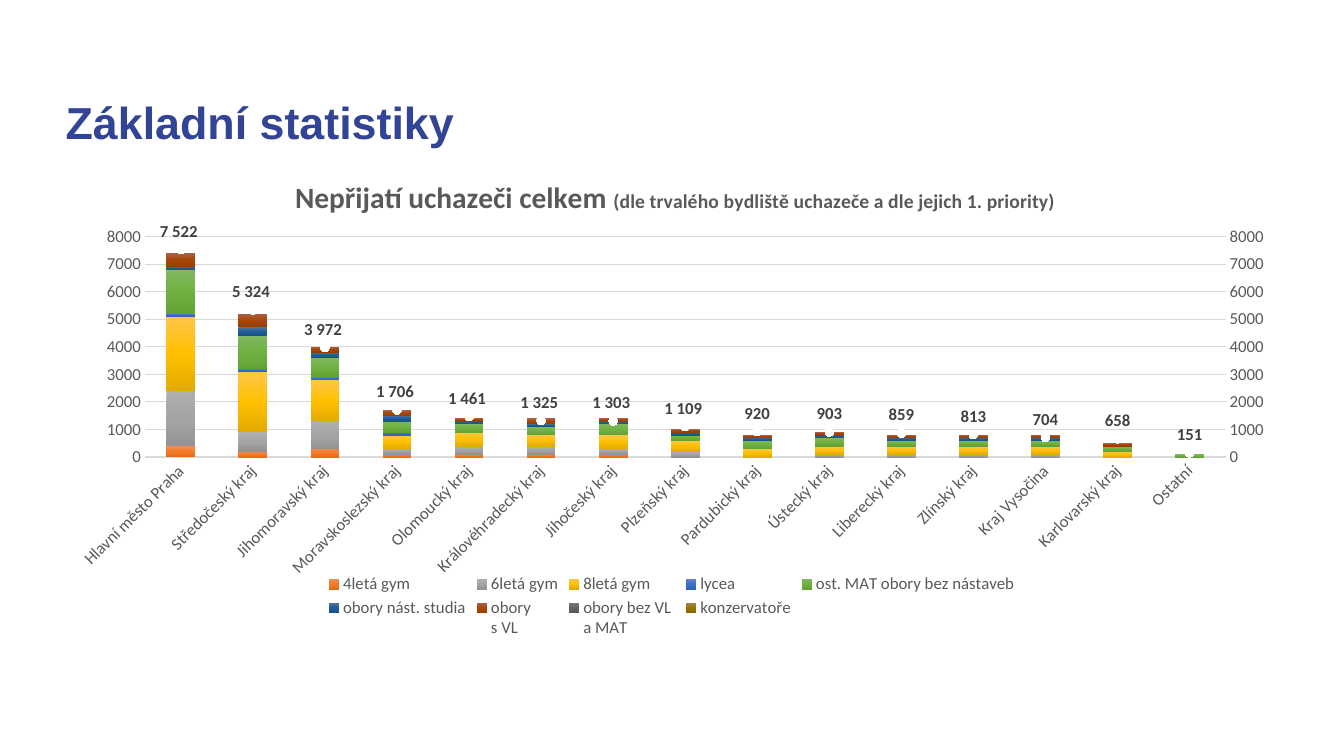
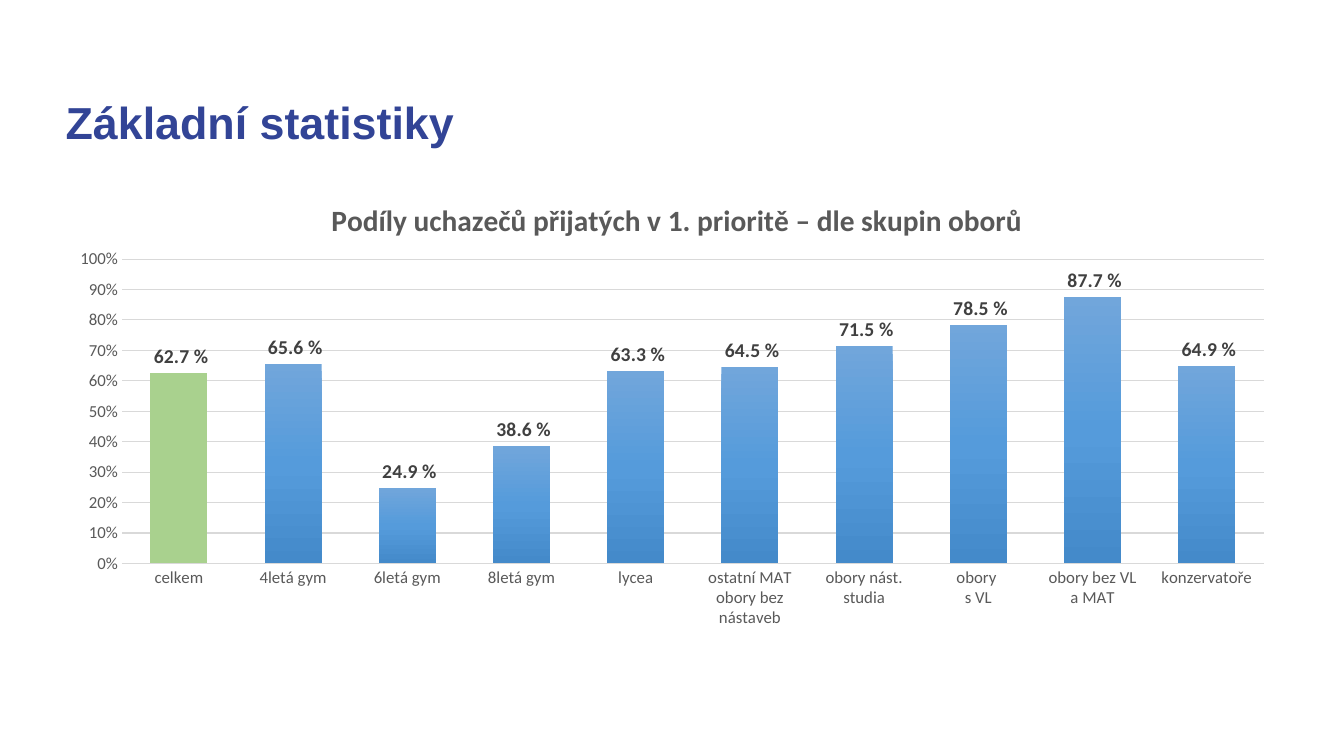
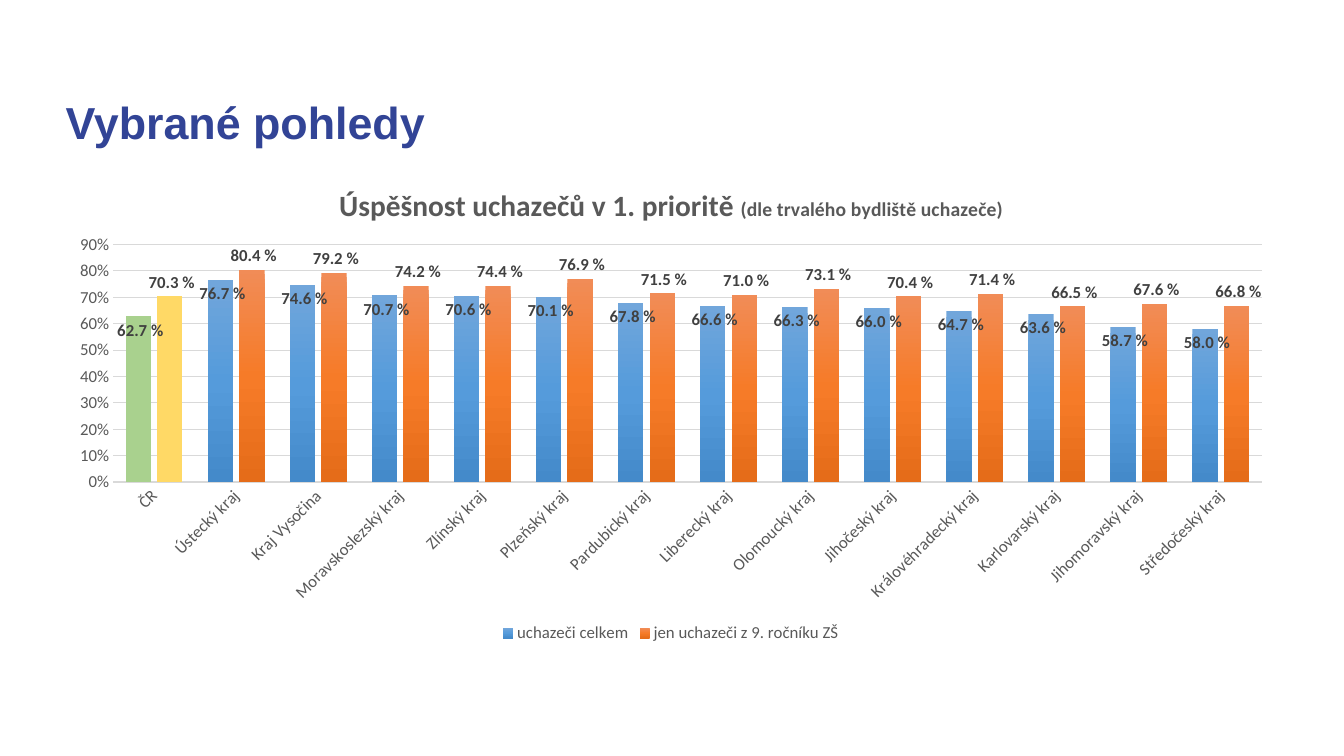
from copy import deepcopy

from pptx import Presentation
from pptx.chart.data import CategoryChartData
from pptx.dml.color import RGBColor
from pptx.enum.chart import (XL_CHART_TYPE, XL_LABEL_POSITION, XL_LEGEND_POSITION,
                             XL_MARKER_STYLE, XL_TICK_MARK)
from pptx.enum.text import MSO_ANCHOR, PP_ALIGN
from pptx.oxml import parse_xml
from pptx.oxml.ns import nsdecls, qn
from pptx.util import Cm, Pt

STACKED, CLUSTERED = XL_CHART_TYPE.COLUMN_STACKED, XL_CHART_TYPE.COLUMN_CLUSTERED
ABOVE, OUTSIDE, INSIDE = (XL_LABEL_POSITION.ABOVE, XL_LABEL_POSITION.OUTSIDE_END,
                          XL_LABEL_POSITION.INSIDE_END)
BOTTOM, CIRCLE, NO_TICK = XL_LEGEND_POSITION.BOTTOM, XL_MARKER_STYLE.CIRCLE, XL_TICK_MARK.NONE
TOP, LEFT = MSO_ANCHOR.TOP, PP_ALIGN.LEFT

NAVY, GREY, DARK, RULE, WHITE = "324496", "595959", "404040", "D9D9D9", "FFFFFF"
LIGHT_GREEN, LIGHT_YELLOW = "A9D18E", "FFD966"
BLUE = ("71A6DB", "559BDB", "448ACA")
ORANGE = ("F18C57", "F67B28", "E56C19")
COUNT = "#\\ ##0_ ;[Red]\\-#\\ ##0\\ ;\\–\\ "
PERCENT = '#\\ ##0.0" "%;[Red]\\-#\\ ##0.0" "%;\\–\\ '
RIGHT_AXIS_IDS = {"c:catAx": "50010", "c:valAx": "50020"}

# Series: name, values, gradient, colour of the first point, label position
REJECTED = [
    ("4letá gym", [400, 200, 300, 100, 100, 100, 100, 0, 0, 0, 0, 0, 0, 0, 0], ORANGE),
    ("6letá gym", [2000, 700, 1000, 200, 300, 300, 200, 200, 0, 100, 100, 100, 100, 0, 0],
     ("AFAFAF", "A5A5A5", "939393")),
    ("8letá gym", [2700, 2200, 1500, 500, 500, 400, 500, 400, 300, 300, 300, 300, 300, 200, 0],
     ("FFC64B", "FFC000", "E3AB00")),
    ("lycea", [100, 100, 100, 100] + [0] * 11, ("6183CB", "3E70CA", "3062BB")),
    ("ost. MAT obory bez nástaveb",
     [1600, 1200, 700, 400, 300, 300, 400, 200, 300, 300, 200, 200, 200, 200, 100],
     ("81B861", "6FB242", "62A336")),
    ("obory nást. studia",
     [100, 300, 200, 200, 100, 100, 100, 100, 100, 100, 100, 100, 100, 0, 0],
     ("51739F", "205E97", "17548B")),
    ("obory \ns VL",
     [500, 500, 200, 200, 100, 200, 100, 100, 100, 100, 100, 100, 100, 100, 0],
     ("AB634B", "A54707", "983E00")),
    ("obory bez VL \na MAT", [0] * 15, ("777777", "636363", "585858")),
    ("konzervatoře", [0] * 15, ("A4844B", "997300", "886600")),
]
REJECTED_TOTALS = [7522, 5324, 3972, 1706, 1461, 1325, 1303, 1109, 920, 903, 859, 813,
                   704, 658, 151]
ADMITTED = [0.627, 0.656, 0.249, 0.386, 0.633, 0.645, 0.715, 0.785, 0.877, 0.649]
SUCCESS_ALL = [0.627, 0.767, 0.746, 0.707, 0.706, 0.701, 0.678, 0.666, 0.663, 0.66, 0.647,
               0.636, 0.587, 0.58]
SUCCESS_NINTH = [0.703, 0.804, 0.792, 0.742, 0.744, 0.769, 0.715, 0.71, 0.731, 0.704, 0.714,
                 0.665, 0.676, 0.668]

# Boxes are left, top, width, height in centimetres on the slide
SLIDES = [
    dict(heading="Základní statistiky",
         title="Nepřijatí uchazeči celkem",
         subtitle="(dle trvalého bydliště uchazeče a dle jejich 1. priority)",
         kind=STACKED, box=(1.4, 3.89, 31.06, 12.29), plot=(3.65, 5.96, 27.24, 5.56),
         title_at=(7.36, 4.41), gap=150, overlap=100, top=8000, step=1000,
         axis_format="General", slanted=True, legend=True,
         categories=["Hlavní město Praha", "Středočeský kraj", "Jihomoravský kraj",
                     "Moravskoslezský kraj", "Olomoucký kraj", "Královéhradecký kraj",
                     "Jihočeský kraj", "Plzeňský kraj", "Pardubický kraj", "Ústecký kraj",
                     "Liberecký kraj", "Zlínský kraj", "Kraj Vysočina", "Karlovarský kraj",
                     "Ostatní"],
         series=[(*row, None, None) for row in REJECTED], totals=REJECTED_TOTALS),
    dict(heading="Základní statistiky",
         title="Podíly uchazečů přijatých v 1. prioritě – dle skupin oborů", subtitle="",
         kind=CLUSTERED, box=(1.4, 4.32, 31.06, 11.73), plot=(3.07, 6.53, 28.78, 7.67),
         title_at=(8.22, 4.89), gap=100, overlap=-24, top=1, step=0.1,
         axis_format="0%", slanted=False, legend=False, label_size=14,
         categories=["celkem", "4letá gym", "6letá gym", "8letá gym", "lycea",
                     "ostatní MAT obory bez nástaveb", "obory nást. studia", "obory \ns VL",
                     "obory bez VL\na MAT", "konzervatoře"],
         series=[("Series 1", ADMITTED, BLUE, LIGHT_GREEN, OUTSIDE)]),
    dict(heading="Vybrané pohledy",
         title="Úspěšnost uchazečů v 1. prioritě",
         subtitle="(dle trvalého bydliště uchazeče)",
         kind=CLUSTERED, box=(1.4, 4.09, 31.01, 12.22), plot=(2.85, 6.16, 28.95, 5.99),
         title_at=(8.47, 4.61), gap=100, overlap=-24, top=0.9, step=0.1,
         axis_format="0%", slanted=True, legend=True, label_size=12,
         categories=["ČR", "Ústecký kraj", "Kraj Vysočina", "Moravskoslezský kraj",
                     "Zlínský kraj", "Plzeňský kraj", "Pardubický kraj", "Liberecký kraj",
                     "Olomoucký kraj", "Jihočeský kraj", "Královéhradecký kraj",
                     "Karlovarský kraj", "Jihomoravský kraj", "Středočeský kraj"],
         series=[("uchazeči celkem", SUCCESS_ALL, BLUE, LIGHT_GREEN, INSIDE),
                 ("jen uchazeči z 9. ročníku ZŠ", SUCCESS_NINTH, ORANGE, LIGHT_YELLOW,
                  OUTSIDE)]),
]


def rgb(value):
    return RGBColor.from_string(value)


def set_all(target, **values):
    for name, value in values.items():
        setattr(target, name, value)


def set_font(font, size, color, bold=False, name="Calibri"):
    set_all(font, size=Pt(size), bold=bold, name=name)
    font.color.rgb = rgb(color)


def set_layout(parent, chart_box, place, inner=False):
    """Place a chart part by its position on the slide."""
    left, top, width, height = chart_box
    parts = [("x", (place[0] - left) / width), ("y", (place[1] - top) / height)]
    if len(place) == 4:
        parts += [("w", place[2] / width), ("h", place[3] / height)]
    target = '<c:layoutTarget val="inner"/>' if inner else ""
    modes = '<c:xMode val="edge"/><c:yMode val="edge"/>'
    sizes = "".join(f'<c:{key} val="{value:.4f}"/>' for key, value in parts)
    layout = parse_xml(f'<c:layout {nsdecls("c")}><c:manualLayout>{target}{modes}{sizes}'
                       '</c:manualLayout></c:layout>')
    for old in parent.findall(qn("c:layout")):
        parent.remove(old)
    text = parent.find(qn("c:tx"))
    parent.insert(0 if text is None else parent.index(text) + 1, layout)


def fill_gradient(series, colors):
    stops = "".join(f'<a:gs pos="{pos}"><a:srgbClr val="{color}"/></a:gs>'
                    for pos, color in zip((0, 50000, 100000), colors))
    series._element.get_or_add_spPr().append(parse_xml(
        f'<a:gradFill {nsdecls("a")} rotWithShape="1"><a:gsLst>{stops}</a:gsLst>'
        '<a:lin ang="5400000" scaled="0"/></a:gradFill>'))


def label_values(series, size, number_format, position):
    labels = series.data_labels
    set_all(labels, show_value=True, number_format=number_format,
            number_format_is_linked=False, position=position)
    set_font(labels.font, size, DARK, bold=True)


def format_axes(chart, spec):
    for axis in (chart.category_axis, chart.value_axis):
        set_all(axis, major_tick_mark=NO_TICK, minor_tick_mark=NO_TICK)
        set_font(axis.tick_labels.font, 12, GREY)
    line = chart.category_axis.format.line
    line.color.rgb, line.width = rgb(RULE), Pt(1)
    if spec["slanted"]:
        body = chart.category_axis._element.find(qn("c:txPr")).find(qn("a:bodyPr"))
        body.set("rot", "-2700000")
        body.set("vert", "horz")

    values = chart.value_axis
    set_all(values, minimum_scale=0, maximum_scale=spec["top"], major_unit=spec["step"],
            has_major_gridlines=True)
    set_all(values.tick_labels, number_format=spec["axis_format"],
            number_format_is_linked=False)
    values.format.line.fill.background()
    grid = values.major_gridlines.format.line
    grid.color.rgb, grid.width = rgb(RULE), Pt(0.75)


def move_totals_to_right_axis(chart):
    """Turn the last column series into markers on a second value axis."""
    columns = chart.plots[0]._element
    totals = columns.findall(qn("c:ser"))[-1]
    for flag in totals.findall(qn("c:invertIfNegative")):
        totals.remove(flag)
    ids = "".join(f'<c:axId val="{value}"/>' for value in RIGHT_AXIS_IDS.values())
    line_plot = parse_xml(f'<c:lineChart {nsdecls("c")}><c:grouping val="standard"/>'
                          f'<c:varyColors val="0"/><c:marker val="1"/>{ids}</c:lineChart>')
    line_plot.insert(2, totals)
    columns.addnext(line_plot)

    last_axis = chart.value_axis._element
    crossing = list(RIGHT_AXIS_IDS.values())[::-1]
    for (tag, axis_id), cross_id in zip(RIGHT_AXIS_IDS.items(), crossing):
        axis = deepcopy(columns.getparent().find(qn(tag)))
        changes = {"c:axId": axis_id, "c:crossAx": cross_id}
        if tag == "c:valAx":
            changes.update({"c:axPos": "r", "c:crosses": "max"})
            axis.remove(axis.find(qn("c:majorGridlines")))
        else:
            changes["c:delete"] = "1"
        for name, value in changes.items():
            axis.find(qn(name)).set("val", value)
        last_axis.addnext(axis)
        last_axis = axis

    series = chart.plots[1].series[0]
    series.smooth = False
    series.format.line.fill.background()
    set_all(series.marker, style=CIRCLE, size=6)
    series.marker.format.fill.solid()
    series.marker.format.fill.fore_color.rgb = rgb(WHITE)
    series.marker.format.line.fill.background()
    label_values(series, 12, COUNT, ABOVE)


def add_legend(chart, hidden_entry):
    chart.has_legend = True
    set_all(chart.legend, position=BOTTOM, include_in_layout=False)
    set_font(chart.legend.font, 12, GREY)
    if hidden_entry is not None:
        chart.legend._element.find(qn("c:legendPos")).addnext(parse_xml(
            f'<c:legendEntry {nsdecls("c")}><c:idx val="{hidden_entry}"/>'
            '<c:delete val="1"/></c:legendEntry>'))


def add_chart(slide, spec):
    data = CategoryChartData()
    data.categories = spec["categories"]
    for name, values, *_ in spec["series"]:
        data.add_series(name, values)
    totals = spec.get("totals")
    if totals:
        data.add_series("Series 10", totals)
    box = spec["box"]
    chart = slide.shapes.add_chart(spec["kind"], *map(Cm, box), data).chart
    set_font(chart.font, 10, "000000")

    chart.has_title = True
    paragraph = chart.chart_title.text_frame.paragraphs[0]
    for text, size in ((spec["title"], 21), (spec["subtitle"], 14)):
        if text:
            run = paragraph.add_run()
            run.text = text + " " if size == 21 and spec["subtitle"] else text
            set_font(run.font, size, GREY, bold=True)
    set_layout(chart.chart_title._element, box, spec["title_at"])

    format_axes(chart, spec)
    columns = chart.plots[0]
    set_all(columns, gap_width=spec["gap"], overlap=spec["overlap"], vary_by_categories=False)
    for series, (_, _, colors, first_color, position) in zip(columns.series, spec["series"]):
        series.invert_if_negative = False
        fill_gradient(series, colors)
        if first_color:
            fill = series.points[0].format.fill
            fill.solid()
            fill.fore_color.rgb = rgb(first_color)
        if position:
            label_values(series, spec["label_size"], PERCENT, position)
    if totals:
        move_totals_to_right_axis(chart)

    chart.has_legend = False
    if spec["legend"]:
        add_legend(chart, len(spec["series"]) if totals else None)
    set_layout(columns._element.getparent(), box, spec["plot"], inner=True)


def add_heading(slide, text):
    frame = slide.shapes.title.text_frame
    frame.text = text
    paragraph = frame.paragraphs[0]
    set_all(paragraph, alignment=LEFT, line_spacing=1.05)
    set_font(paragraph.runs[0].font, 32, NAVY, bold=True, name="Arial")


def main():
    deck = Presentation()
    set_all(deck, slide_width=Cm(33.87), slide_height=Cm(19.05))
    layout = deck.slide_layouts[5]
    heading = layout.placeholders[0]
    set_all(heading, left=Cm(1.4), top=Cm(2.18), width=Cm(31.01), height=Cm(1.7))
    heading.text_frame.vertical_anchor = TOP
    for spec in SLIDES:
        slide = deck.slides.add_slide(layout)
        add_heading(slide, spec["heading"])
        add_chart(slide, spec)
    deck.save("out.pptx")


if __name__ == "__main__":
    main()
